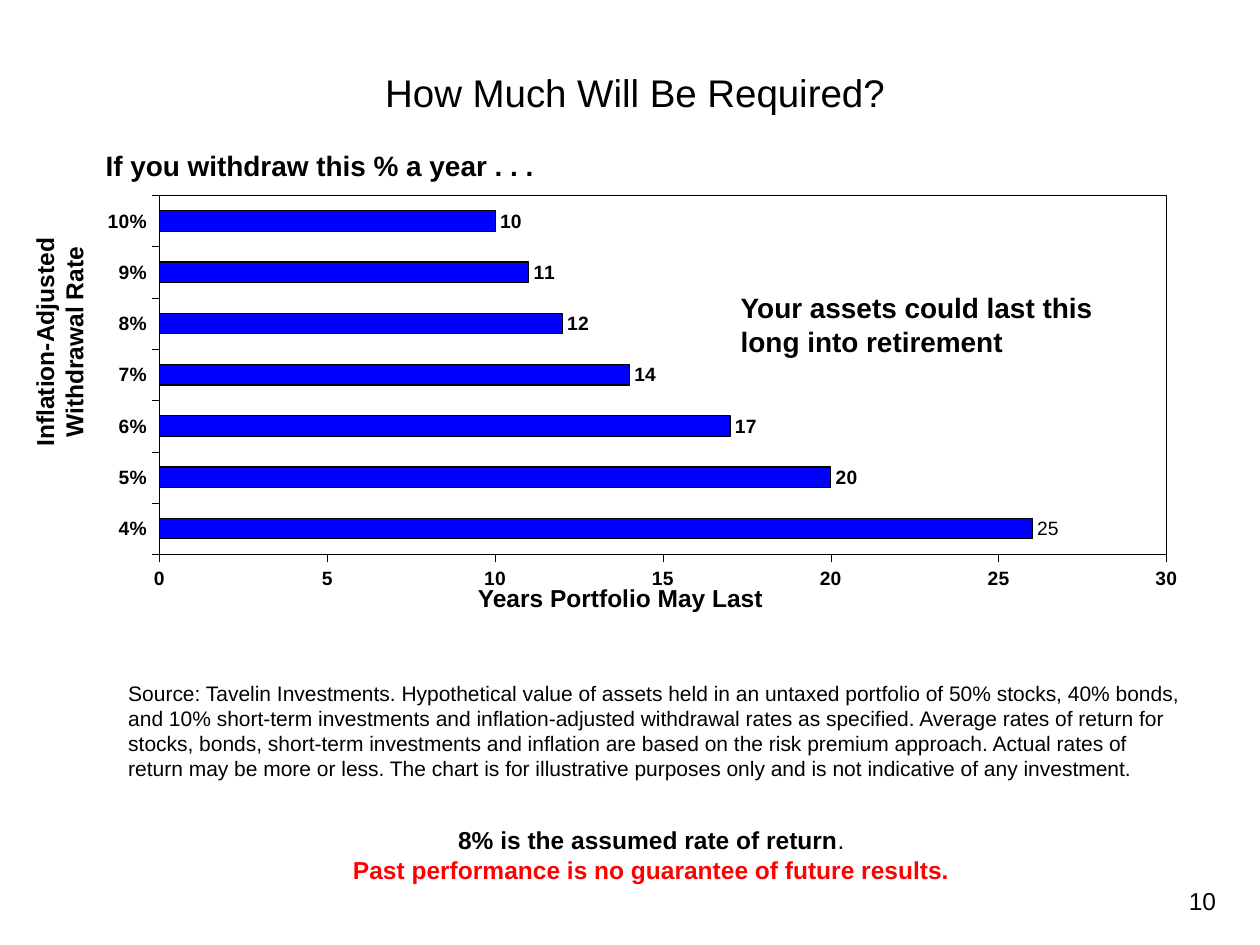
import pptx
import pptx.util
import pptx.dml.color
import pptx.chart.data
import pptx.enum.chart
import pptx.enum.text
import pptx.oxml
import pptx.oxml.ns

Pt = pptx.util.Pt
RGB = pptx.dml.color.RGBColor
BLACK, BLUE, RED = RGB(0, 0, 0), RGB(0, 0, 255), RGB(255, 0, 0)
FONT = "Arial"
ALIGN = pptx.enum.text.PP_ALIGN
LEFT, MID, RIGHT = ALIGN.LEFT, ALIGN.CENTER, ALIGN.RIGHT

TITLE = "How Much Will Be Required?"
RATES = ["4%", "5%", "6%", "7%", "8%", "9%", "10%"]
YEARS = [26, 20, 17, 14, 12, 11, 10]
FIRST = "25"
PLOT = {"x": 0.084, "y": 0.024, "w": 0.888, "h": 0.848}
SOURCE = (
    "Source: Tavelin Investments. Hypothetical value of assets held in an "
    "untaxed portfolio of 50% stocks, 40% bonds, and 10% short-term "
    "investments and inflation-adjusted withdrawal rates as specified. "
    "Average rates of return for stocks, bonds, short-term investments and "
    "inflation are based on the risk premium approach. Actual rates of return "
    "may be more or less. The chart is for illustrative purposes only and is "
    "not indicative of any investment."
)
NOTES = [
    ((53.3, 81.4, 329, 27), 0, LEFT, 16,
     [[("If you withdraw this % a year . . .", True, BLACK)]]),
    ((416.2, 162.7, 224, 46), 0, LEFT, 16,
     [[("Your assets could last this long into retirement", True, BLACK)]]),
    ((66.2, 385.2, 618.5, 65.5), 0, LEFT, 12, [[(SOURCE, False, BLACK)]]),
    ((228.2, 329.8, 252.7, 24), 0, MID, 14,
     [[("Years Portfolio May Last", True, BLACK)]]),
    ((-65.5, 175, 198.7, 41), 270, MID, 14,
     [[("Inflation-Adjusted Withdrawal Rate", True, BLACK)]]),
    ((534.2, 502.6, 167.8, 37.4), 0, RIGHT, 14, [[("10", False, BLACK)]]),
    ((174.2, 468, 396, 58), 0, MID, 14,
     [[("8% is the assumed rate of return", True, BLACK),
       (".", False, BLACK)],
      [("Past performance is no guarantee of future results.", True, RED)]]),
]


def style(font, size, bold=False, color=BLACK):
    font.name = FONT
    font.size = Pt(size)
    font.bold = bold
    font.color.rgb = color


def place(shape, box):
    shape.left, shape.top, shape.width, shape.height = map(Pt, box)


def add_note(slide, box, turn, align, size, paras):
    shape = slide.shapes.add_textbox(*map(Pt, box))
    shape.rotation = turn
    frame = shape.text_frame
    frame.word_wrap = True
    for i, runs in enumerate(paras):
        para = frame.paragraphs[0] if i == 0 else frame.add_paragraph()
        para.alignment = align
        for text, bold, color in runs:
            run = para.add_run()
            run.text = text
            style(run.font, size, bold, color)


def set_plot(chart):
    area = chart._chartSpace.chart.plotArea
    ns = pptx.oxml.ns.nsdecls("c", "a")
    for old in area.findall(pptx.oxml.ns.qn("c:layout")):
        area.remove(old)
    parts = "".join(f'<c:{k} val="{v}"/>' for k, v in PLOT.items())
    area.insert(0, pptx.oxml.parse_xml(
        f'<c:layout {ns}><c:manualLayout><c:layoutTarget val="inner"/>'
        '<c:xMode val="edge"/><c:yMode val="edge"/>'
        f'{parts}</c:manualLayout></c:layout>'))
    area.append(pptx.oxml.parse_xml(
        f'<c:spPr {ns}><a:noFill/><a:ln w="8800"><a:solidFill>'
        f'<a:srgbClr val="{BLACK}"/></a:solidFill></a:ln></c:spPr>'))


def add_bars(slide):
    enum = pptx.enum.chart
    data = pptx.chart.data.CategoryChartData()
    data.categories = RATES
    data.add_series("Series 1", YEARS)
    chart = slide.shapes.add_chart(
        enum.XL_CHART_TYPE.BAR_CLUSTERED,
        *map(Pt, (36.7, 105.8, 648, 242)), data).chart
    chart.has_title = chart.has_legend = False
    style(chart.font, 12.4, True)
    for axis in (chart.category_axis, chart.value_axis):
        axis.has_major_gridlines = False
        axis.major_tick_mark = enum.XL_TICK_MARK.OUTSIDE
        axis.minor_tick_mark = enum.XL_TICK_MARK.NONE
        style(axis.tick_labels.font, 11, True)
        axis.format.line.color.rgb = BLACK
        axis.format.line.width = Pt(0.17)
    scale = chart.value_axis
    scale.minimum_scale, scale.maximum_scale, scale.major_unit = 0, 30, 5
    plot = chart.plots[0]
    plot.gap_width = 150
    plot.vary_by_categories = False
    bars = plot.series[0]
    bars.format.fill.solid()
    bars.format.fill.fore_color.rgb = BLUE
    bars.format.line.color.rgb = BLACK
    bars.format.line.width = Pt(0.69)
    tags = bars.data_labels
    tags.show_value = True
    tags.number_format = "General"
    tags.number_format_is_linked = False
    tags.position = enum.XL_LABEL_POSITION.OUTSIDE_END
    style(tags.font, 11, True)
    tag = bars.points[0].data_label
    run = tag.text_frame.paragraphs[0].add_run()
    run.text = FIRST
    style(run.font, 11)
    tag.position = enum.XL_LABEL_POSITION.OUTSIDE_END
    set_plot(chart)


def add_title(slide):
    title = slide.shapes.title
    place(title, (36, 15.8, 653.8, 50.4))
    frame = title.text_frame
    frame.vertical_anchor = pptx.enum.text.MSO_ANCHOR.BOTTOM
    frame.margin_bottom = 0
    para = frame.paragraphs[0]
    para.alignment = MID
    para.line_spacing = 0.9
    run = para.add_run()
    run.text = TITLE
    style(run.font, 22)


def main():
    deck = pptx.Presentation()
    deck.slide_width, deck.slide_height = Pt(720), Pt(540)
    slide = deck.slides.add_slide(deck.slide_layouts[5])
    add_title(slide)
    add_bars(slide)
    for note in NOTES:
        add_note(slide, *note)
    deck.save("out.pptx")


if __name__ == "__main__":
    main()
